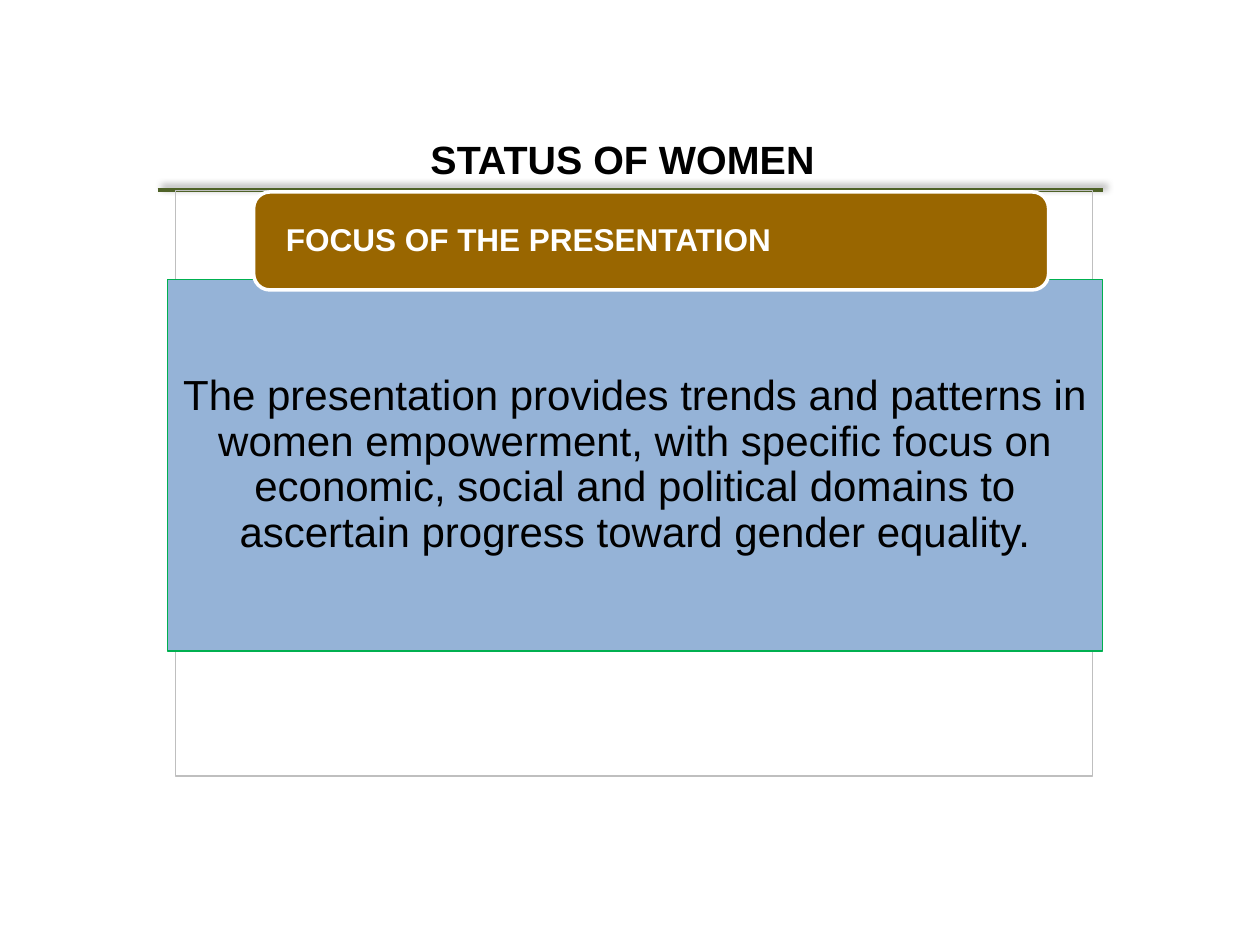
from lxml import etree
from pptx import Presentation
from pptx.dml.color import RGBColor
from pptx.enum import shapes, text
from pptx.oxml import ns
from pptx.util import Pt


def color(value):
    return RGBColor.from_string(value)


def write(shape, words, size, hue="000000", bold=False, align="CENTER",
          anchor="MIDDLE", spacing=1.0, margins=(0, 0)):
    """Set the text of a shape; margins are horizontal and vertical points."""
    frame = shape.text_frame
    frame.word_wrap = True
    frame.auto_size = text.MSO_AUTO_SIZE.NONE
    frame.vertical_anchor = getattr(text.MSO_ANCHOR, anchor)
    frame.margin_left = frame.margin_right = Pt(margins[0])
    frame.margin_top = frame.margin_bottom = Pt(margins[1])
    paragraph = frame.paragraphs[0]
    paragraph.alignment = getattr(text.PP_ALIGN, align)
    paragraph.line_spacing = spacing
    run = paragraph.add_run()
    run.text = words
    run.font.name = "Arial"
    run.font.size = Pt(size)
    run.font.bold = bold
    run.font.color.rgb = color(hue)


def add_box(slide, box, line, line_width, fill=None, kind="RECTANGLE"):
    shape = slide.shapes.add_shape(
        getattr(shapes.MSO_SHAPE, kind), *map(Pt, box))
    shape.shadow.inherit = False
    if fill:
        shape.fill.solid()
        shape.fill.fore_color.rgb = color(fill)
    else:
        shape.fill.background()
    shape.line.color.rgb = color(line)
    shape.line.width = Pt(line_width)
    return shape


def add_shadow(connector):
    effects = etree.SubElement(
        connector._element.spPr, ns.qn("a:effectLst"))
    shadow = etree.SubElement(
        effects, ns.qn("a:outerShdw"), blurRad=str(Pt(4)), dist=str(Pt(3)),
        dir=str(315 * 60000), algn="bl", rotWithShape="0")
    hue = etree.SubElement(shadow, ns.qn("a:srgbClr"), val="000000")
    etree.SubElement(hue, ns.qn("a:alpha"), val="40000")


def add_heading(slide, left, top, width, height):
    title = slide.shapes.title
    title.left, title.top = Pt(left + 10), Pt(top)
    title.width, title.height = Pt(width - 22), Pt(height)
    write(title, "STATUS OF WOMEN ", 22.5, bold=True, anchor="TOP")

    rule_y = Pt(top + 31.7)
    rule = slide.shapes.add_connector(
        shapes.MSO_CONNECTOR.STRAIGHT, Pt(left), rule_y,
        Pt(left + width), rule_y)
    rule.line.color.rgb = color("4F6228")
    rule.line.width = Pt(2.25)
    add_shadow(rule)


def add_focus(slide, left, top, width, height):
    """Outlined frame with a wider text panel and a label over its top edge."""
    add_box(slide, (left, top, width, height), "BFBFBF", 0.75)

    panel = add_box(slide, (left - 4.5, top + 51, width + 10, 212.4),
                    "00B050", 0.75, fill="95B3D7")
    write(panel, "The presentation provides trends and patterns in women "
          "empowerment, with specific focus on economic, social and political "
          "domains to ascertain progress toward gender equality.",
          24, spacing=0.9, margins=(7.2, 7.2))

    label = add_box(slide, (left + 44.7, top + 1, 454.3, 56), "FFFFFF", 2,
                    fill="996600", kind="ROUNDED_RECTANGLE")
    write(label, "FOCUS OF THE PRESENTATION", 18, hue="FFFFFF", bold=True,
          align="LEFT", spacing=0.9, margins=(15.8, 2.2))


def main():
    presentation = Presentation()
    presentation.slide_width, presentation.slide_height = Pt(720), Pt(540)
    slide = presentation.slides.add_slide(presentation.slide_layouts[5])
    add_heading(slide, 90, 77, 540, 43.2)
    add_focus(slide, 100.2, 108.7, 524.2, 334.8)
    presentation.save("out.pptx")


if __name__ == "__main__":
    main()
